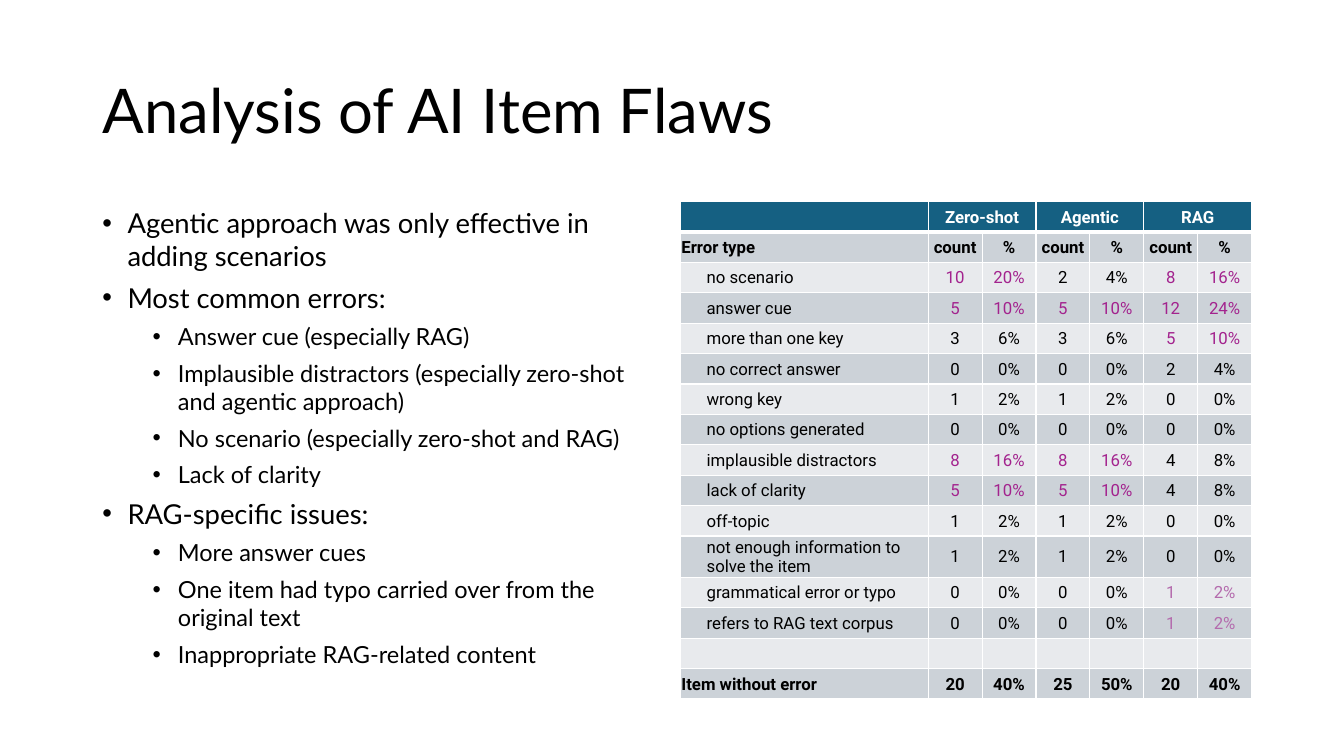
"""Build the slide on AI item flaws: bullet findings beside a table of error counts."""
from dataclasses import dataclass

from lxml import etree
from pptx import Presentation
from pptx import util as u
from pptx.dml.color import RGBColor
from pptx.enum import text
from pptx.oxml.ns import qn

COLUMNS, ROWS = 160, 90
SLIDE_W, SLIDE_H = u.Inches(13.333), u.Inches(7.5)
BLACK, WHITE, TEAL = "000000", "FFFFFF", "156082"
DARK_BAND, LIGHT_BAND = "CCD2D8", "E8EAED"
PURPLE, PALE_PURPLE = "A3238E", "B46BAD"
ITEMS_PER_METHOD, FREQUENT = 50, 5
METHODS = ("Zero-shot", "Agentic", "RAG")
LABEL_COLS, ROW_HEIGHT = 29.5, 3.62


@dataclass(frozen=True)
class Box:
    """A place on the slide grid, in columns and rows."""
    left: float
    top: float
    width: float
    height: float


@dataclass(frozen=True)
class Bullet:
    """One finding and its outline level."""
    words: str
    level: int = 0


@dataclass(frozen=True)
class ErrorRow:
    """An error type with its count for each method."""
    label: str
    counts: tuple[int, ...] = ()
    total: bool = False
    rag_only: bool = False


@dataclass(frozen=True)
class Style:
    """The look of a table cell."""
    fill: str
    colour: str = BLACK
    bold: bool = False
    align: text.PP_ALIGN = text.PP_ALIGN.CENTER
    indent: float = 0


TITLE = Box(11, 4.8, 138, 17.4)
FINDINGS = Box(11, 24, 68, 57.1)
TABLE = Box(81, 24, 68, 16 * ROW_HEIGHT)

BULLETS = (
    Bullet("Agentic approach was only effective in adding scenarios"),
    Bullet("Most common errors:"),
    Bullet("Answer cue (especially RAG)", 1),
    Bullet("Implausible distractors (especially zero-shot and agentic approach)", 1),
    Bullet("No scenario (especially zero-shot and RAG)", 1),
    Bullet("Lack of clarity", 1),
    Bullet("RAG-specific issues:"),
    Bullet("More answer cues", 1),
    Bullet("One item had typo carried over from the original text", 1),
    Bullet("Inappropriate RAG-related content", 1),
)
ERRORS = (
    ErrorRow("no scenario", (10, 2, 8)),
    ErrorRow("answer cue", (5, 5, 12)),
    ErrorRow("more than one key", (3, 3, 5)),
    ErrorRow("no correct answer", (0, 0, 2)),
    ErrorRow("wrong key", (1, 1, 0)),
    ErrorRow("no options generated", (0, 0, 0)),
    ErrorRow("implausible distractors", (8, 8, 4)),
    ErrorRow("lack of clarity", (5, 5, 4)),
    ErrorRow("off-topic", (1, 1, 0)),
    ErrorRow("not enough information to solve the item", (1, 1, 0)),
    ErrorRow("grammatical error or typo", (0, 0, 1), rag_only=True),
    ErrorRow("refers to RAG text corpus", (0, 0, 1), rag_only=True),
    ErrorRow(""),
    ErrorRow("Item without error", (20, 25, 20), total=True),
)


def rgb(colour: str) -> RGBColor:
    """Turn a hex string into a colour."""
    return RGBColor.from_string(colour)


def cols(n: float) -> int:
    """Length of n grid columns."""
    return round(SLIDE_W * n / COLUMNS)


def rows(n: float) -> int:
    """Length of n grid rows."""
    return round(SLIDE_H * n / ROWS)


def place(box: Box) -> tuple[int, int, int, int]:
    """Left, top, width and height of a grid box."""
    return cols(box.left), rows(box.top), cols(box.width), rows(box.height)


def add_run(p, words: str, size: float, font: str, colour: str = BLACK, bold: bool = False) -> None:
    """Add one formatted run to a paragraph."""
    r = p.add_run()
    r.text = words
    r.font.size, r.font.name, r.font.bold = u.Pt(size), font, bold
    r.font.color.rgb = rgb(colour)


def add_title(s, words: str) -> None:
    """Move and format the title placeholder."""
    sp = s.shapes.title
    sp.left, sp.top, sp.width, sp.height = place(TITLE)
    tf = sp.text_frame
    tf.vertical_anchor = text.MSO_ANCHOR.MIDDLE
    p = tf.paragraphs[0]
    p.alignment, p.line_spacing = text.PP_ALIGN.LEFT, 0.9
    add_run(p, words, 44, "Lato")


def add_findings(s) -> None:
    """Add the two-level list of findings."""
    tf = s.shapes.add_textbox(*place(FINDINGS)).text_frame
    tf.word_wrap = True
    for i, bullet in enumerate(BULLETS):
        p = tf.add_paragraph() if i else tf.paragraphs[0]
        p.level, p.space_before = bullet.level, u.Pt(6)
        add_run(p, bullet.words, 16.8 if bullet.level else 19.6, "Lato")
        props = p._p.get_or_add_pPr()
        props.set("marL", str(cols(3 + 6 * bullet.level)))
        props.set("indent", str(-cols(3)))
        etree.SubElement(props, qn("a:buFont"), typeface="Arial")
        etree.SubElement(props, qn("a:buChar"), char="•")


def set_borders(cell, top: float, bottom: float) -> None:
    """Draw white borders round a cell, with top and bottom widths in points."""
    props = cell._tc.get_or_add_tcPr()
    for i, (side, width) in enumerate((("L", 1), ("R", 1), ("T", top), ("B", bottom))):
        ln = etree.Element(qn(f"a:ln{side}"), w=str(u.Pt(width)))
        fill = etree.SubElement(ln, qn("a:solidFill"))
        etree.SubElement(fill, qn("a:srgbClr"), val=WHITE)
        props.insert(i, ln)


def fill_cell(cell, words: str, style: Style, top: float = 1, bottom: float = 1) -> None:
    """Write and format one table cell."""
    cell.fill.solid()
    cell.fill.fore_color.rgb = rgb(style.fill)
    set_borders(cell, top, bottom)
    cell.margin_left = cell.margin_right = cell.margin_top = u.Inches(0.01)
    cell.margin_bottom = 0
    cell.vertical_anchor = text.MSO_ANCHOR.MIDDLE
    p = cell.text_frame.paragraphs[0]
    p.alignment = style.align
    p._p.get_or_add_pPr().set("marL", str(cols(style.indent)))
    if words:
        add_run(p, words, 12, "Roboto", style.colour, style.bold)
    else:
        p._p.get_or_add_endParaRPr().set("sz", "1200")


def count_colour(row: ErrorRow, count: int) -> str:
    """Colour that marks frequent and RAG-only errors."""
    if row.rag_only and count:
        return PALE_PURPLE
    return PURPLE if count >= FREQUENT and not row.total else BLACK


def add_headings(table) -> None:
    """Fill the method row and the column heading row."""
    head = Style(TEAL, WHITE, True)
    sub = Style(DARK_BAND, bold=True)
    fill_cell(table.cell(0, 0), "", head, bottom=3)
    fill_cell(table.cell(1, 0), "Error type", Style(DARK_BAND, bold=True, align=text.PP_ALIGN.LEFT), top=3)
    for i, method in enumerate(METHODS):
        c = 1 + 2 * i
        table.cell(0, c).merge(table.cell(0, c + 1))
        for offset, (name, heading) in enumerate(((method, "count"), ("", "%"))):
            fill_cell(table.cell(0, c + offset), name, head, bottom=3)
            fill_cell(table.cell(1, c + offset), heading, sub, top=3)


def add_error_table(s) -> None:
    """Add the table of error counts and shares by method."""
    table = s.shapes.add_table(len(ERRORS) + 2, 1 + 2 * len(METHODS), *place(TABLE)).table
    for i, column in enumerate(table.columns):
        column.width = cols((TABLE.width - LABEL_COLS) / 6 if i else LABEL_COLS)
    for line in table.rows:
        line.height = rows(ROW_HEIGHT)
    add_headings(table)
    for i, row in enumerate(ERRORS):
        band = DARK_BAND if i % 2 else LIGHT_BAND
        label = Style(band, BLACK, row.total, text.PP_ALIGN.LEFT, 0 if row.total else 3)
        fill_cell(table.cell(i + 2, 0), row.label, label)
        for m in range(len(METHODS)):
            count = row.counts[m] if row.counts else 0
            style = Style(band, count_colour(row, count), row.total)
            pair = (str(count), f"{count * 100 // ITEMS_PER_METHOD}%") if row.counts else ("", "")
            for offset, words in enumerate(pair):
                fill_cell(table.cell(i + 2, 1 + 2 * m + offset), words, style)


def main() -> None:
    """Build and save the slide."""
    prs = Presentation()
    prs.slide_width, prs.slide_height = SLIDE_W, SLIDE_H
    s = prs.slides.add_slide(prs.slide_layouts[5])
    add_title(s, "Analysis of AI Item Flaws")
    add_findings(s)
    add_error_table(s)
    prs.save("out.pptx")


if __name__ == "__main__":
    main()
